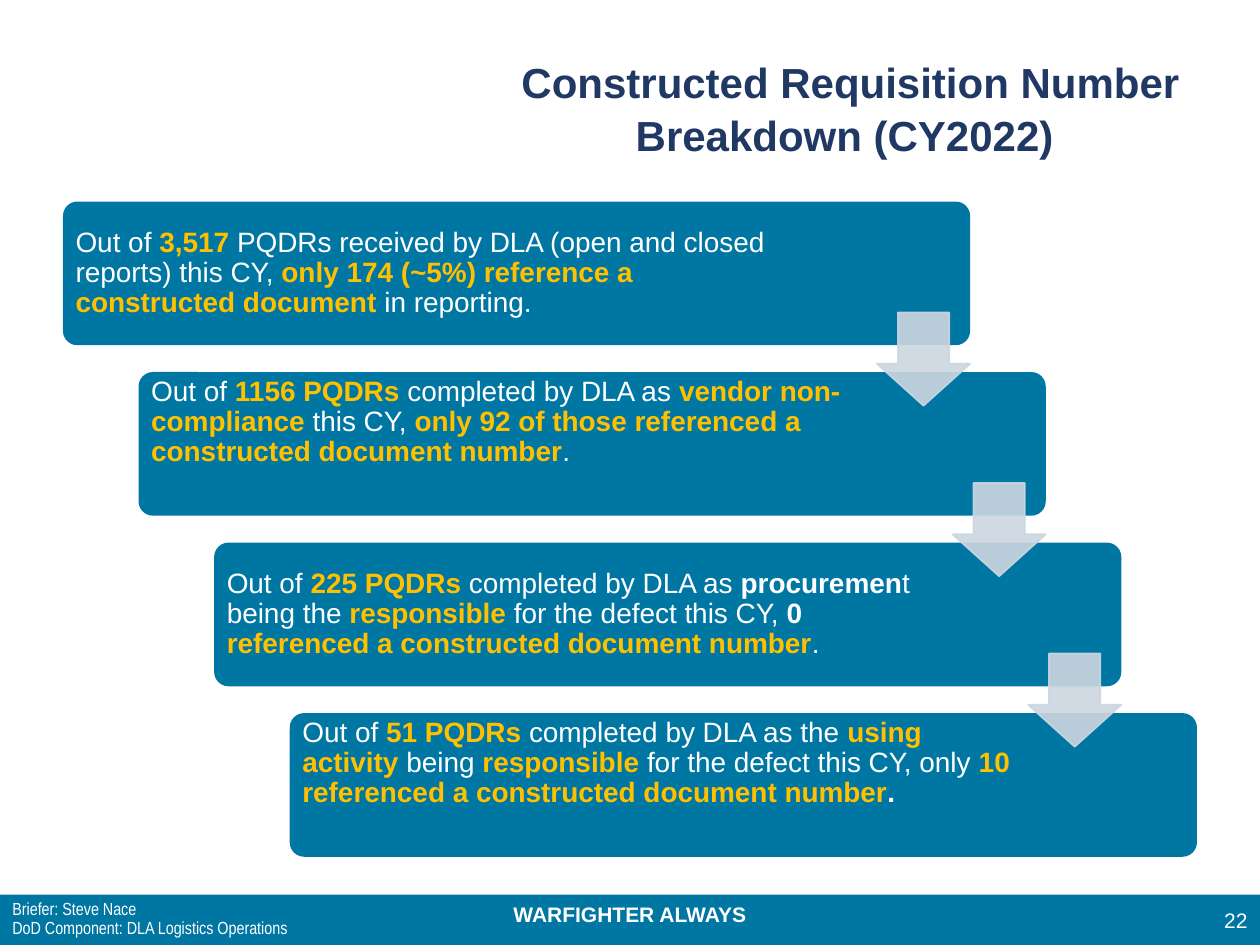
from typing import NamedTuple

from lxml.etree import SubElement
from pptx import Presentation
from pptx.dml.color import RGBColor
from pptx.enum.shapes import MSO_SHAPE
from pptx.enum.text import MSO_ANCHOR, PP_ALIGN
from pptx.oxml.ns import qn
from pptx.util import Inches, Pt

BLUE, NAVY, GOLD, WHITE, SILVER = "0076A3", "203864", "FFC000", "FFFFFF", "CCD6E0"


class Box(NamedTuple):
    left: float
    top: float
    width: float
    height: float


class Span(NamedTuple):
    text: str
    color: str = WHITE
    bold: bool = False


class Step(NamedTuple):
    spans: list[Span]
    at_top: bool = False


def key(text: str) -> Span:
    return Span(text, GOLD, True)


def rgb(hex_color: str) -> RGBColor:
    return RGBColor.from_string(hex_color)


def add_block(slide, kind, box: Box, color: str, adjustments=()):
    block = slide.shapes.add_shape(kind, *map(Inches, box))
    block.shadow.inherit = False
    block.fill.solid()
    block.fill.fore_color.rgb = rgb(color)
    block.line.fill.background()
    for index, value in enumerate(adjustments):
        block.adjustments[index] = value
    return block


def add_arrow(slide, box: Box) -> None:
    arrow = add_block(slide, MSO_SHAPE.DOWN_ARROW, box, SILVER, (0.55, 0.45))
    arrow.line.color.rgb = rgb(SILVER)
    arrow.line.width = Pt(1)
    # Make fill and outline slightly transparent
    for color in arrow.element.spPr.iter(qn("a:srgbClr")):
        SubElement(color, qn("a:alpha"), val="90000")


def add_text(slide, box: Box, lines: list[list[Span]], size: float, font="Arial",
             align=PP_ALIGN.LEFT, anchor=MSO_ANCHOR.MIDDLE, spacing=1.0):
    frame = slide.shapes.add_textbox(*map(Inches, box)).text_frame
    frame.word_wrap = True
    frame.vertical_anchor = anchor
    for index, spans in enumerate(lines):
        paragraph = frame.paragraphs[0] if index == 0 else frame.add_paragraph()
        paragraph.alignment = align
        paragraph.line_spacing = spacing
        paragraph.font.size = Pt(size)
        paragraph.font.name = font
        for span in spans:
            run = paragraph.add_run()
            run.text = span.text
            run.font.bold = span.bold
            run.font.color.rgb = rgb(span.color)
    return frame


def add_step(slide, step: Step, left: float, top: float) -> None:
    add_block(slide, MSO_SHAPE.ROUNDED_RECTANGLE, Box(left, top, 7.2, 1.14), BLUE, (0.1,))
    frame = add_text(slide, Box(left + 0.03, top + 0.03, 5.8, 1.08), [step.spans], 16,
                     anchor=MSO_ANCHOR.TOP if step.at_top else MSO_ANCHOR.MIDDLE, spacing=0.9)
    frame.margin_left = frame.margin_right = Inches(0.07)
    frame.margin_top = frame.margin_bottom = Inches(0.01 if step.at_top else 0.07)


STEPS = [
    Step([Span("Out of "), key("3,517 "),
          Span("PQDRs received by DLA (open and closed reports) this CY, "),
          key("only 174 (~5%) reference a constructed document "), Span("in reporting.")]),
    Step([Span("Out of "), key("1156 PQDRs "), Span("completed by DLA as "),
          key("vendor non-compliance "), Span("this CY, "),
          key("only 92 of those referenced a constructed document number"), Span(".")],
         at_top=True),
    Step([Span("Out of "), key("225 PQDRs "), Span("completed by DLA as "),
          Span("procuremen", bold=True), Span("t being the "), key("responsible"),
          Span(" for the defect this CY, "), Span("0 ", bold=True),
          key("referenced a constructed document number"), Span(".")]),
    Step([Span("Out of "), key("51 PQDRs "), Span("completed by DLA as the "),
          key("using activity "), Span("being "), key("responsible "),
          Span("for the defect this CY, only "),
          key("10 referenced a constructed document number"), Span(".", bold=True)],
         at_top=True),
]
STEP_RIGHT = 0.6
STEP_DOWN = (5.66 - 1.6) / 3


def main() -> None:
    deck = Presentation()
    deck.slide_width, deck.slide_height = Inches(10), Inches(7.5)
    slide = deck.slides.add_slide(deck.slide_layouts[6])

    # Footer band
    add_block(slide, MSO_SHAPE.RECTANGLE, Box(0, 7.1, 10, 0.4), BLUE)
    add_text(slide, Box(0, 7.11, 10, 0.3), [[Span("WARFIGHTER ALWAYS", bold=True)]], 12,
             align=PP_ALIGN.CENTER, anchor=MSO_ANCHOR.TOP)
    add_text(slide, Box(9.5, 7.1, 0.5, 0.4), [[Span("22")]], 12, align=PP_ALIGN.RIGHT)
    add_text(slide, Box(0, 7.1, 3, 0.4),
             [[Span("Briefer: Steve Nace")], [Span("DoD Component: DLA Logistics Operations")]],
             10, font="Arial Narrow", spacing=0.9)

    # Title
    add_text(slide, Box(4, 0.4, 5.5, 0.9),
             [[Span("Constructed Requisition Number Breakdown (CY2022) ", NAVY, True)]], 24,
             align=PP_ALIGN.CENTER, spacing=1.05)

    # Staircase of findings, then the arrows between them
    for index, step in enumerate(STEPS):
        add_step(slide, step, 0.5 + index * STEP_RIGHT, 1.6 + index * STEP_DOWN)
    for index in range(len(STEPS) - 1):
        add_arrow(slide, Box(6.96 + index * STEP_RIGHT, 2.48 + index * STEP_DOWN, 0.74, 0.74))

    deck.save("out.pptx")


if __name__ == "__main__":
    main()
